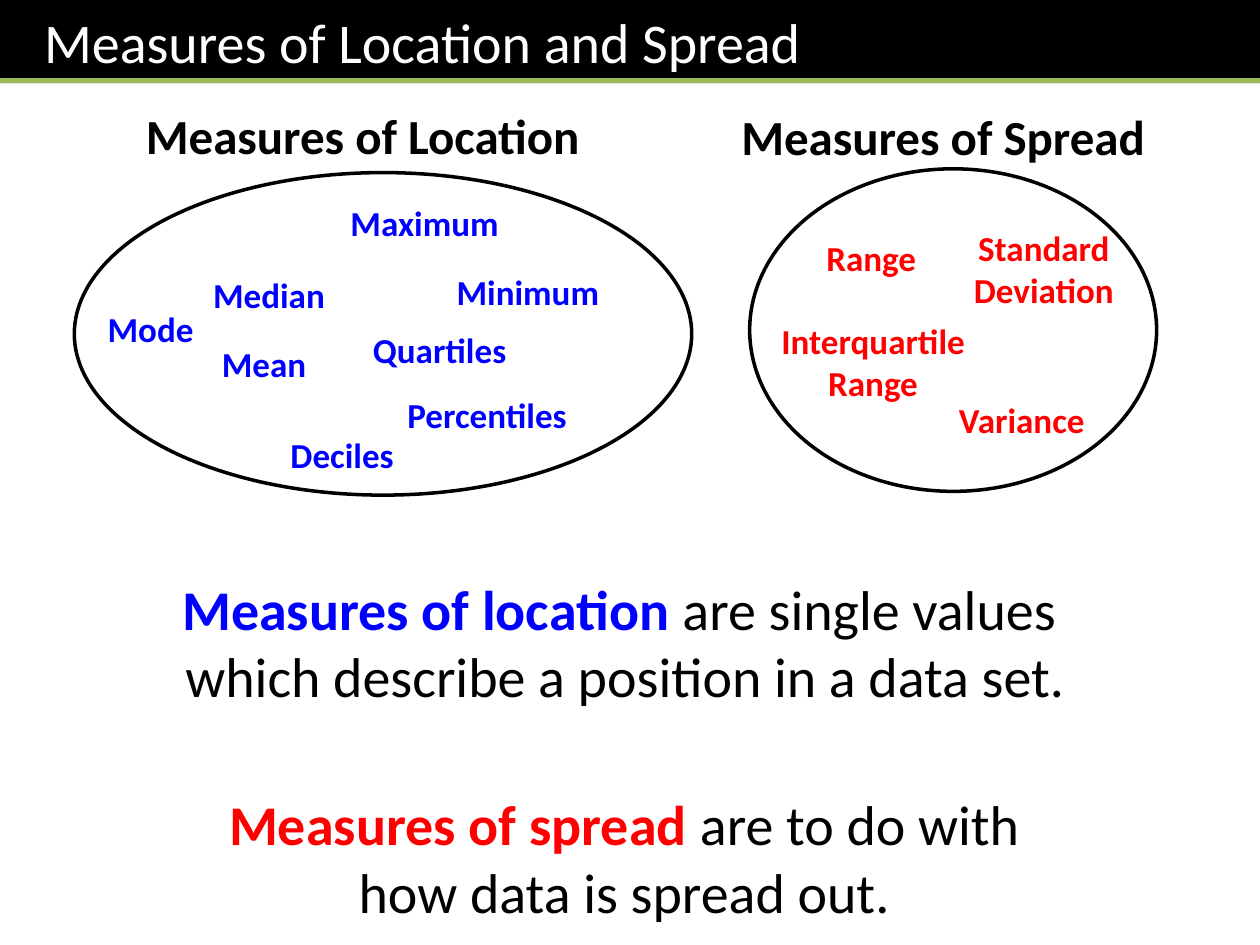
from dataclasses import dataclass

from pptx import Presentation
from pptx import util as u
from pptx.dml.color import RGBColor
from pptx.enum import shapes, text
from pptx.oxml.ns import qn
from lxml import etree

BLACK, WHITE, GREEN = "000000", "FFFFFF", "9BBB59"
BLUE, RED = "0000FF", "FF0000"
LEFT, CENTER = text.PP_ALIGN.LEFT, text.PP_ALIGN.CENTER


@dataclass
class Label:
    words: str
    left: float
    top: float
    width: float
    height: float = 0.44
    color: str = BLUE
    size: int = 20
    align: text.PP_ALIGN = CENTER


@dataclass
class Definition:
    term: str
    opening: str
    ending: str
    color: str
    left: float
    top: float
    width: float


@dataclass
class Oval:
    left: float
    top: float
    width: float
    height: float = 2.56


OVALS = [Oval(0.59, 1.37, 4.9), Oval(5.95, 1.34, 3.23)]

HEADINGS = [
    Label("Measures of Location", 1.06, 0.79, 4.17, 0.57, BLACK, 28, LEFT),
    Label("Measures of Spread", 5.4, 0.8, 4.17, 0.57, BLACK, 28),
]

SPREAD = [
    Label("Range", 6.46, 1.83, 0.94, color=RED, align=LEFT),
    Label("Interquartile Range", 6, 2.49, 1.86, 0.77, RED),
    Label("Standard Deviation", 7.57, 1.75, 1.43, 0.77, RED),
    Label("Variance", 7.48, 3.11, 1.26, color=RED),
]

LOCATION = [
    Label("Mode", 0.62, 2.39, 1.15),
    Label("Median", 1.56, 2.12, 1.15),
    Label("Mean", 1.52, 2.67, 1.15),
    Label("Quartiles", 2.76, 2.56, 1.46),
    Label("Percentiles", 3.07, 3.07, 1.59),
    Label("Deciles", 1.92, 3.39, 1.59),
    Label("Maximum", 2.64, 1.55, 1.46),
    Label("Minimum", 3.46, 2.1, 1.46),
]

DEFINITIONS = [
    Definition("Measures of location ", "are single values ",
               "which describe a position in a data set.",
               BLUE, -0.07, 4.51, 10.07),
    Definition("Measures of spread ", "are to do with ",
               "how data is spread out. ", RED, 0.01, 6.22, 9.99),
]


def rgb(color: str) -> RGBColor:
    return RGBColor.from_string(color)


def add_span(para, words: str, size: int, color: str, bold: bool = False) -> None:
    span = para.add_run()
    span.text = words
    formats = {"name": "Calibri", "size": u.Pt(size), "bold": bold}
    for name, value in formats.items():
        setattr(span.font, name, value)
    span.font.color.rgb = rgb(color)


def add_box(page, left: float, top: float, width: float, height: float):
    box = page.shapes.add_textbox(*map(u.Inches, (left, top, width, height)))
    box.text_frame.word_wrap = True
    return box.text_frame


def add_label(page, label: Label) -> None:
    frame = add_box(page, label.left, label.top, label.width, label.height)
    para = frame.paragraphs[0]
    para.alignment = label.align
    add_span(para, label.words, label.size, label.color, bold=True)


def add_definition(page, item: Definition) -> None:
    frame = add_box(page, item.left, item.top, item.width, 1.18)
    first, second = frame.paragraphs[0], frame.add_paragraph()
    first.alignment = second.alignment = CENTER
    add_span(first, item.term, 32, item.color, bold=True)
    add_span(first, item.opening, 32, BLACK)
    add_span(second, item.ending, 32, BLACK)


def add_oval(page, oval: Oval) -> None:
    shape = page.shapes.add_shape(
        shapes.MSO_SHAPE.OVAL,
        *map(u.Inches, (oval.left, oval.top, oval.width, oval.height)))
    shape.shadow.inherit = False
    shape.fill.solid()
    shape.fill.fore_color.rgb = rgb(WHITE)
    shape.line.color.rgb = rgb(BLACK)
    shape.line.width = u.Pt(2)


def add_title(page, words: str) -> None:
    group = page.shapes.add_group_shape()
    band = group.shapes.add_shape(
        shapes.MSO_SHAPE.RECTANGLE, *map(u.Inches, (0, 0, 10, 0.66)))
    band.shadow.inherit = False
    band.fill.solid()
    band.fill.fore_color.rgb = rgb(BLACK)
    band.line.fill.background()
    formats = {"margin_left": u.Inches(0.35), "word_wrap": True,
               "vertical_anchor": text.MSO_ANCHOR.MIDDLE}
    for name, value in formats.items():
        setattr(band.text_frame, name, value)
    para = band.text_frame.paragraphs[0]
    para.alignment = LEFT
    add_span(para, words, 32, WHITE)

    rule = group.shapes.add_connector(
        shapes.MSO_CONNECTOR.STRAIGHT, *map(u.Inches, (0, 0.64, 10, 0.64)))
    rule.line.color.rgb = rgb(GREEN)
    rule.line.width = u.Pt(3)
    etree.SubElement(rule._element.spPr, qn("a:effectLst"))


def main() -> None:
    deck = Presentation()
    deck.slide_width, deck.slide_height = u.Inches(10), u.Inches(7.5)
    page = deck.slides.add_slide(deck.slide_layouts[6])

    # Title band
    add_title(page, "Measures of Location and Spread")

    # Two sets of measures
    for oval in OVALS:
        add_oval(page, oval)
    for label in HEADINGS + SPREAD + LOCATION:
        add_label(page, label)

    # Definitions
    for item in DEFINITIONS:
        add_definition(page, item)

    deck.save("out.pptx")


if __name__ == "__main__":
    main()
